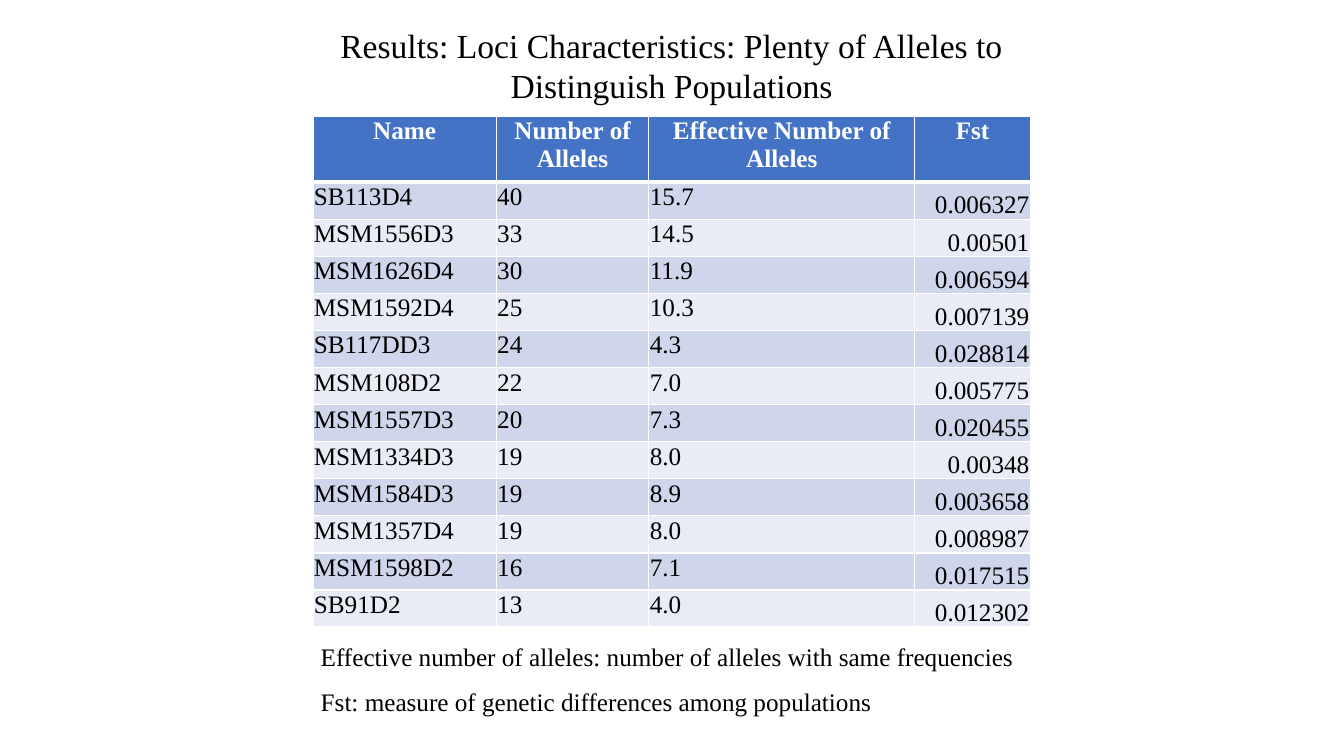
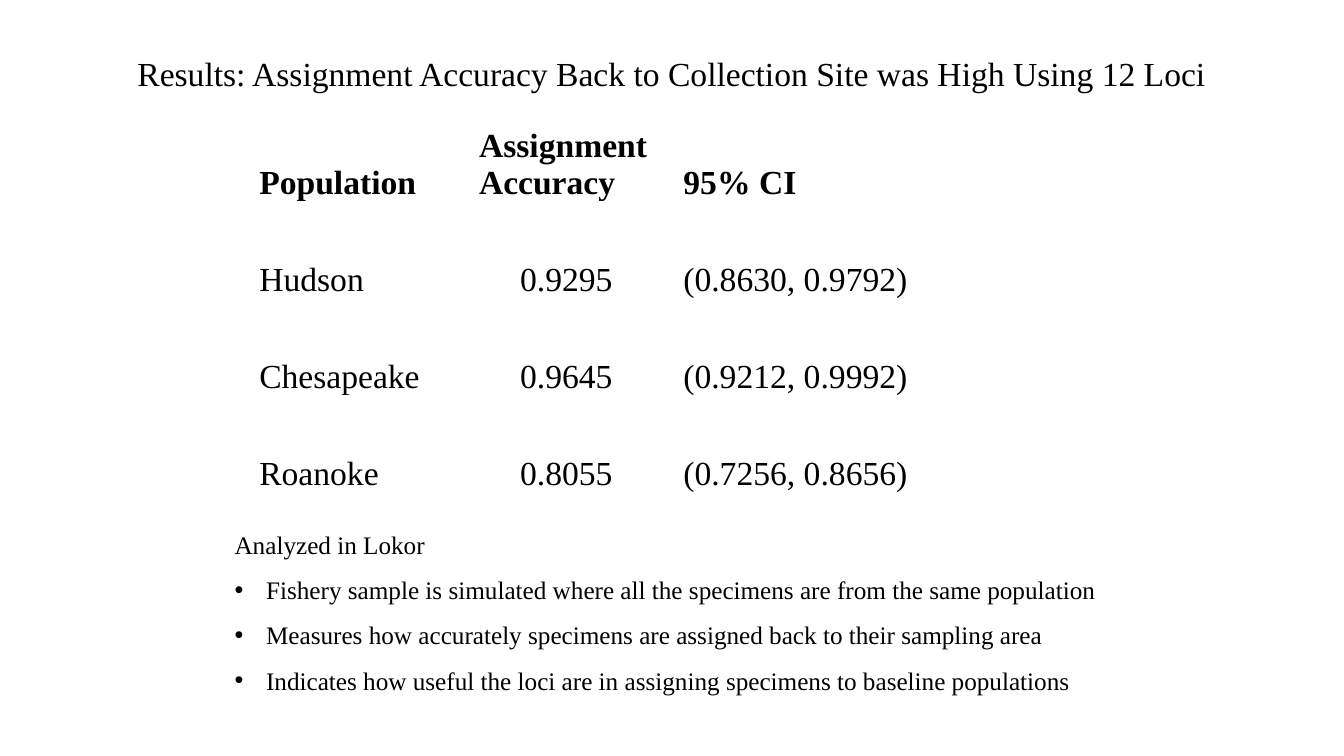
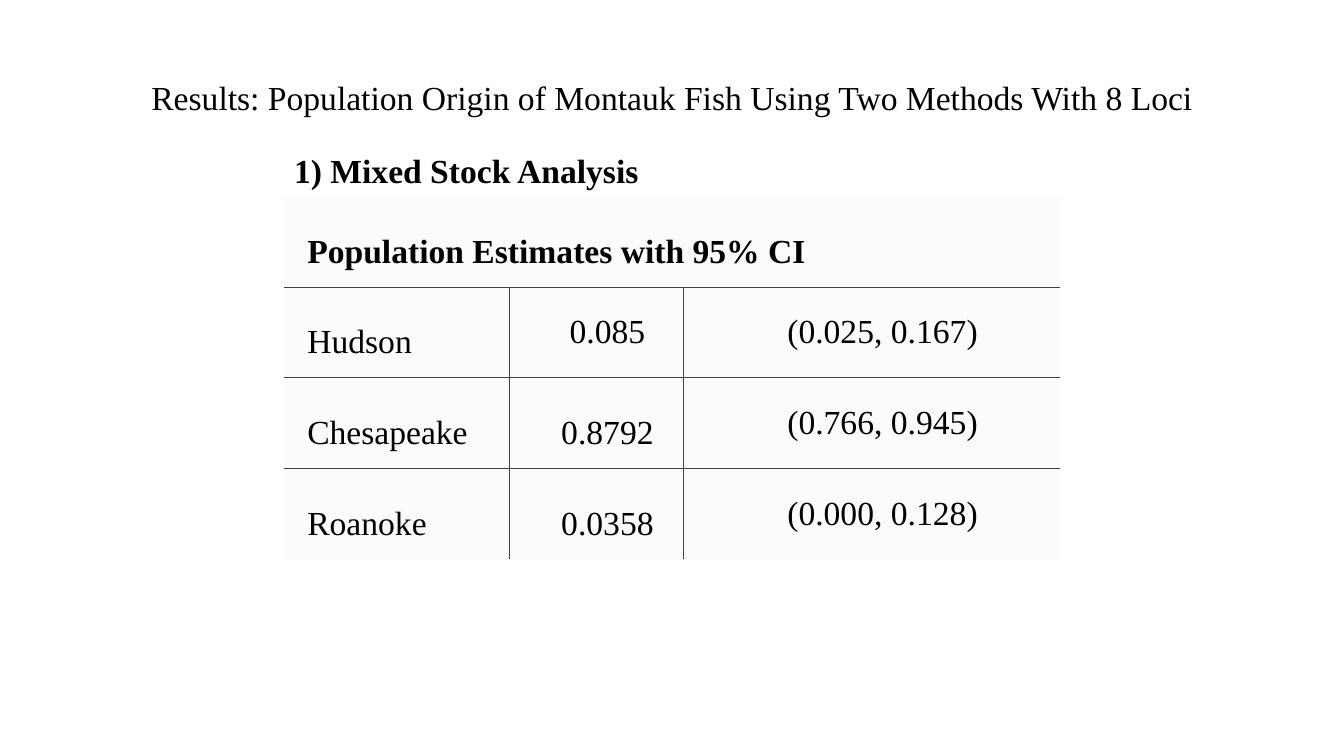
from dataclasses import dataclass, field

from lxml import etree
from pptx import Presentation
from pptx import util as u
from pptx.dml import color as c
from pptx.enum import text
from pptx.oxml import ns

FONT = "Times New Roman"
BLACK, WHITE = "000000", "FFFFFF"
BLUE, BANDS = "4472C4", ("CFD5EA", "E9EBF5")
GRAY, RULE_COLOR = "F2F2F2", "404040"
TITLE_SIZE, NOTE_SIZE = 24, 18
LEFT, CENTER, RIGHT = text.PP_ALIGN.LEFT, text.PP_ALIGN.CENTER, text.PP_ALIGN.RIGHT
TOP, MIDDLE, BOTTOM = text.MSO_ANCHOR.TOP, text.MSO_ANCHOR.MIDDLE, text.MSO_ANCHOR.BOTTOM
TIGHT = (0.7, 0.7, 0.7, 0)
ROOMY = (16.5, 12, 0.7, 12)


@dataclass
class CellLook:
    size: float = TITLE_SIZE
    align: int = LEFT
    anchor: int = BOTTOM
    bold: bool = False
    color: str = BLACK
    fill: str = ""
    opacity: int = 100
    insets: tuple = TIGHT
    borders: dict = field(default_factory=dict)


def rgb(value):
    return c.RGBColor.from_string(value)


def format_paragraph(paragraph, size, align=LEFT, bold=False, color=BLACK, spacing=None):
    paragraph.alignment = align
    if spacing:
        paragraph.line_spacing = spacing
    for run in paragraph.runs:
        run.font.name = FONT
        run.font.size = u.Pt(size)
        run.font.bold = bold
        run.font.color.rgb = rgb(color)


def add_bullet(paragraph):
    properties = paragraph._p.get_or_add_pPr()
    indent = u.Pt(22.5)
    properties.set("marL", str(indent))
    properties.set("indent", str(-indent))
    etree.SubElement(properties, ns.qn("a:buFont"), typeface="Arial")
    etree.SubElement(properties, ns.qn("a:buChar"), char="•")


def add_text(slide, box, lines, size, anchor=TOP, bulleted_from=None, **style):
    shape = slide.shapes.add_textbox(*map(u.Pt, box))
    frame = shape.text_frame
    frame.word_wrap = True
    frame.vertical_anchor = anchor
    frame.text = "\n".join(lines)
    for index, paragraph in enumerate(frame.paragraphs):
        format_paragraph(paragraph, size, **style)
        if bulleted_from is not None and index >= bulleted_from:
            add_bullet(paragraph)


def add_title(slide, box, title, spacing=1.5):
    add_text(slide, box, [title], TITLE_SIZE, MIDDLE, align=CENTER, spacing=spacing)


def set_borders(cell, borders):
    properties = cell._tc.get_or_add_tcPr()
    sides = [side for side in "LRTB" if side in borders]
    for position, side in enumerate(sides):
        color, width = borders[side]
        line = etree.Element(ns.qn(f"a:ln{side}"), w=str(u.Pt(width)))
        fill = etree.SubElement(line, ns.qn("a:solidFill"))
        etree.SubElement(fill, ns.qn("a:srgbClr"), val=color)
        properties.insert(position, line)


def format_cell(cell, look):
    cell.margin_left, cell.margin_top, cell.margin_right, cell.margin_bottom = map(u.Pt, look.insets)
    cell.vertical_anchor = look.anchor
    if look.fill:
        cell.fill.solid()
        cell.fill.fore_color.rgb = rgb(look.fill)
    else:
        cell.fill.background()
    if look.opacity < 100:
        for node in cell._tc.tcPr.iter(ns.qn("a:srgbClr")):
            etree.SubElement(node, ns.qn("a:alpha"), val=str(look.opacity * 1000))
    set_borders(cell, look.borders)
    for paragraph in cell.text_frame.paragraphs:
        format_paragraph(paragraph, look.size, look.align, look.bold, look.color)


def add_table(slide, left, top, widths, heights, rows, choose_look):
    frame = slide.shapes.add_table(len(rows), len(widths), u.Pt(left), u.Pt(top),
                                   u.Pt(sum(widths)), u.Pt(sum(heights)))
    table = frame.table
    table.first_row = table.horz_banding = False
    for column, width in zip(table.columns, widths):
        column.width = u.Pt(width)
    for row, height in zip(table.rows, heights):
        row.height = u.Pt(height)
    for row_index, values in enumerate(rows):
        for column_index, value in enumerate(values):
            cell = table.cell(row_index, column_index)
            cell.text = value
            format_cell(cell, choose_look(row_index, column_index))
    return table


def loci_look(row, column):
    borders = dict.fromkeys("LRTB", (WHITE, 1))
    if row == 0:
        borders["B"] = (WHITE, 3)
        return CellLook(NOTE_SIZE, CENTER, TOP, True, WHITE, BLUE, borders=borders)
    if row == 1:
        borders["T"] = (WHITE, 3)
    is_fst = column == 3
    return CellLook(NOTE_SIZE, RIGHT if is_fst else LEFT, BOTTOM if is_fst else TOP,
                    fill=BANDS[(row - 1) % 2], borders=borders)


def accuracy_look(row, column):
    return CellLook(align=CENTER if row and column == 1 else LEFT, bold=row == 0)


def mixture_look(row, column):
    sides = ("T" if row else "") + ("B" if row < 3 else "")
    if row:
        sides += ("L" if column else "") + ("R" if column < 2 else "")
    centered_vertically = column == 2 or (row, column) == (1, 1)
    return CellLook(align=CENTER if row and column else LEFT,
                    anchor=MIDDLE if row and centered_vertically else BOTTOM,
                    bold=row == 0, fill=GRAY, opacity=30, insets=ROOMY,
                    borders=dict.fromkeys(sides, (RULE_COLOR, 0.5)))


def build_loci_slide(slide):
    add_title(slide, (210, 23, 539.5, 47),
              "Results: Loci Characteristics: Plenty of Alleles to Distinguish Populations", None)
    add_text(slide, (222, 443.5, 515, 69),
             ["Effective number of alleles: number of alleles with same frequencies",
              "Fst: measure of genetic differences among populations"], NOTE_SIZE, spacing=1.5)
    rows = [
        ("Name", "Number of Alleles", "Effective Number of Alleles", "Fst"),
        ("SB113D4", "40", "15.7", "0.006327"),
        ("MSM1556D3", "33", "14.5", "0.00501"),
        ("MSM1626D4", "30", "11.9", "0.006594"),
        ("MSM1592D4", "25", "10.3", "0.007139"),
        ("SB117DD3", "24", "4.3", "0.028814"),
        ("MSM108D2", "22", "7.0", "0.005775"),
        ("MSM1557D3", "20", "7.3", "0.020455"),
        ("MSM1334D3", "19", "8.0", "0.00348"),
        ("MSM1584D3", "19", "8.9", "0.003658"),
        ("MSM1357D4", "19", "8.0", "0.008987"),
        ("MSM1598D2", "16", "7.1", "0.017515"),
        ("SB91D2", "13", "4.0", "0.012302"),
    ]
    heights = [47.2] + [26.5] * (len(rows) - 1)
    add_table(slide, 223.5, 83, (131, 109, 190, 82.5), heights, rows, loci_look)


def build_accuracy_slide(slide):
    rows = [
        ("Population", "Assignment Accuracy", "", "95% CI"),
        ("Hudson", "0.9295", "", "(0.8630, 0.9792)"),
        ("Chesapeake", "0.9645", "", "(0.9212, 0.9992)"),
        ("Roanoke", "0.8055", "", "(0.7256, 0.8656)"),
    ]
    add_table(slide, 184.5, 75, (157, 126, 20, 287.5), [69.25] * 4, rows, accuracy_look)
    add_title(slide, (87, 26.5, 785.5, 37),
              "Results: Assignment Accuracy Back to Collection Site was High Using 12 Loci")
    add_text(slide, (160.5, 363.5, 639.5, 134),
             ["Analyzed in Lokor",
              "Fishery sample is simulated where all the specimens are from the same population",
              "Measures how accurately specimens are assigned back to their sampling area",
              "Indicates how useful the loci are in assigning specimens to baseline populations"],
             NOTE_SIZE, bulleted_from=1, spacing=1.5)


def build_mixture_slide(slide):
    add_title(slide, (98.5, 39, 763, 47),
              "Results: Population Origin of Montauk Fish Using Two Methods With 8 Loci")
    rows = [
        ("Population Estimates with 95% CI", "", ""),
        ("Hudson", "0.085", "(0.025, 0.167)"),
        ("Chesapeake", "0.8792", "(0.766, 0.945)"),
        ("Roanoke", "0.0358", "(0.000, 0.128)"),
    ]
    table = add_table(slide, 203, 140.25, (160.75, 124.5, 268.5), [64.8] * 4, rows, mixture_look)
    table.cell(0, 0).merge(table.cell(0, 2))
    add_text(slide, (203, 103.5, 337.5, 36), ["1) Mixed Stock Analysis"], TITLE_SIZE, bold=True)


def main():
    presentation = Presentation()
    presentation.slide_width, presentation.slide_height = u.Pt(960), u.Pt(540)
    for build in (build_loci_slide, build_accuracy_slide, build_mixture_slide):
        build(presentation.slides.add_slide(presentation.slide_layouts[6]))
    presentation.save("out.pptx")


if __name__ == "__main__":
    main()
